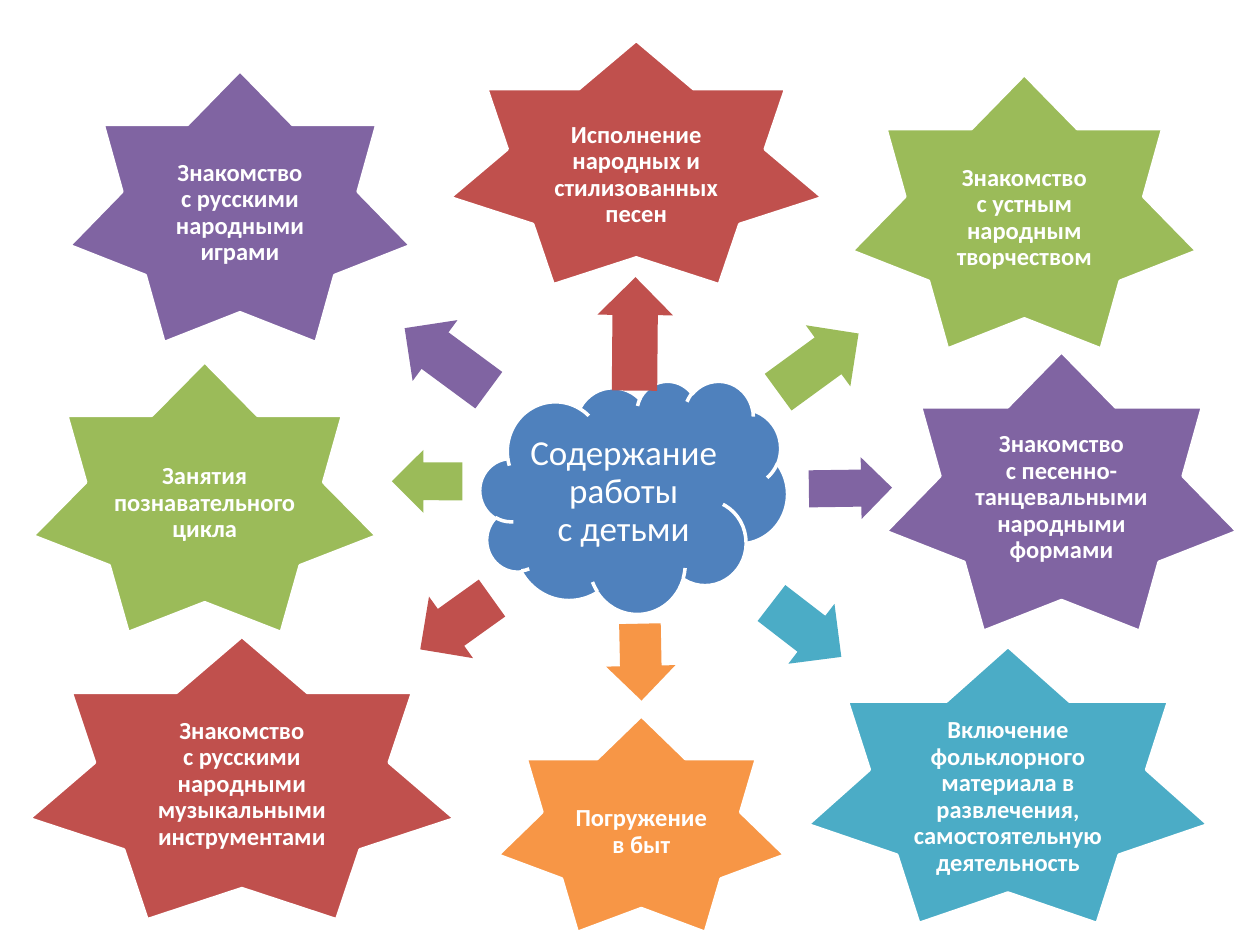
"""Build a slide with a central cloud and eight coloured topic stars around it."""
from dataclasses import dataclass

from pptx import Presentation
from pptx import util as u
from pptx.dml import color
from pptx.enum import shapes, text

FONT = "Calibri"
WHITE, BLUE, RED, GREEN = "FFFFFF", "4F81BD", "C0504D", "9BBB59"
PURPLE, TEAL, ORANGE = "8064A2", "4BACC6", "F79646"
SHORT_GAP, LONG_GAP = 0.21, 0.3

Box = tuple[float, float, float, float]


@dataclass(frozen=True)
class Topic:
    """A star with its label and the arrow that points at it."""

    lines: tuple[str, ...]
    fill: str
    star: Box
    arrow: Box
    angle: float
    gap: float = SHORT_GAP


TOPICS = (
    Topic(("Исполнение народных и стилизованных песен",), RED,
          (3.57, 0.32, 2.96, 1.94), (4.59, 2.35, 0.9, 0.6), 270.5, LONG_GAP),
    Topic(("Знакомство", "с устным народным творчеством"), GREEN,
          (6.76, 0.59, 2.74, 2.18), (6.1, 2.58, 0.79, 0.6), 323.9),
    Topic(("Знакомство", "с песенно-танцевальными народными формами"), PURPLE,
          (7.03, 2.79, 2.79, 2.22), (6.42, 3.63, 0.66, 0.49), 359.2),
    Topic(("Включение фольклорного материала в развлечения, "
           "самостоятельную деятельность",), TEAL,
          (6.41, 5.13, 3.18, 2.2), (6.05, 4.7, 0.7, 0.6), 37.6, LONG_GAP),
    Topic(("Погружение", "в быт"), ORANGE,
          (3.95, 5.68, 2.28, 1.72), (4.78, 4.98, 0.61, 0.55), 88.8),
    Topic(("Знакомство", "с русскими народными музыкальными инструментами"), RED,
          (0.23, 5.05, 3.38, 2.25), (3.27, 4.65, 0.7, 0.6), 144.4),
    Topic(("Занятия познавательного цикла",), GREEN,
          (0.26, 2.87, 2.73, 2.15), (3.11, 3.57, 0.56, 0.5), 180.1),
    Topic(("Знакомство", "с русскими народными играми"), PURPLE,
          (0.55, 0.56, 2.71, 2.16), (3.13, 2.55, 0.83, 0.6), 216.4),
)


def rgb(value: str) -> color.RGBColor:
    """Turn a hex string into a colour."""
    return color.RGBColor.from_string(value)


def add_figure(slide, kind, box: Box, fill: str, outlined: bool = True):
    """Draw a filled preset shape, with a white outline if wanted."""
    shape = slide.shapes.add_shape(kind, *map(u.Inches, box))
    shape.shadow.inherit = False
    shape.fill.solid()
    shape.fill.fore_color.rgb = rgb(fill)
    if outlined:
        shape.line.color.rgb = rgb(WHITE)
        shape.line.width = u.Pt(2)
    else:
        shape.line.fill.background()
    return shape


def add_label(slide, box: Box, lines: tuple[str, ...], size: int, bold: bool,
              inset: float, gap: float = 0) -> None:
    """Write centred white lines, pushed down by the gap."""
    frame = slide.shapes.add_textbox(*map(u.Inches, box)).text_frame
    frame.word_wrap = True
    frame.vertical_anchor = text.MSO_ANCHOR.MIDDLE
    frame.margin_left = frame.margin_right = frame.margin_bottom = u.Inches(inset)
    frame.margin_top = u.Inches(inset + gap)
    frame.text = "\n".join(lines)
    for paragraph in frame.paragraphs:
        paragraph.alignment = text.PP_ALIGN.CENTER
        paragraph.line_spacing = 0.9
        for run in paragraph.runs:
            run.font.name = FONT
            run.font.size = u.Pt(size)
            run.font.bold = bold
            run.font.color.rgb = rgb(WHITE)


def add_topic(slide, topic: Topic) -> None:
    """Draw the arrow, the star and the label of a topic."""
    arrow = add_figure(slide, shapes.MSO_SHAPE.RIGHT_ARROW, topic.arrow, topic.fill, False)
    arrow.adjustments[0], arrow.adjustments[1] = 0.6, 0.5
    arrow.rotation = topic.angle
    add_figure(slide, shapes.MSO_SHAPE.STAR_7_POINT, topic.star, topic.fill)
    left, top, width, height = topic.star
    label = (left + 0.22 * width, top + 0.2 * height, 0.56 * width, 0.55 * height)
    add_label(slide, label, topic.lines, 14, True, 0.02, topic.gap)


def main() -> None:
    """Build and save the presentation."""
    presentation = Presentation()
    presentation.slide_width, presentation.slide_height = u.Inches(10), u.Inches(7.5)
    slide = presentation.slides.add_slide(presentation.slide_layouts[6])
    add_figure(slide, shapes.MSO_SHAPE.CLOUD, (3.81, 3.02, 2.44, 1.85), BLUE)
    add_label(slide, (4.15, 3.3, 1.6, 1.21), ("Содержание работы", "с детьми"),
              20, False, 0.03)
    for topic in TOPICS:
        add_topic(slide, topic)
    presentation.save("out.pptx")


if __name__ == "__main__":
    main()
